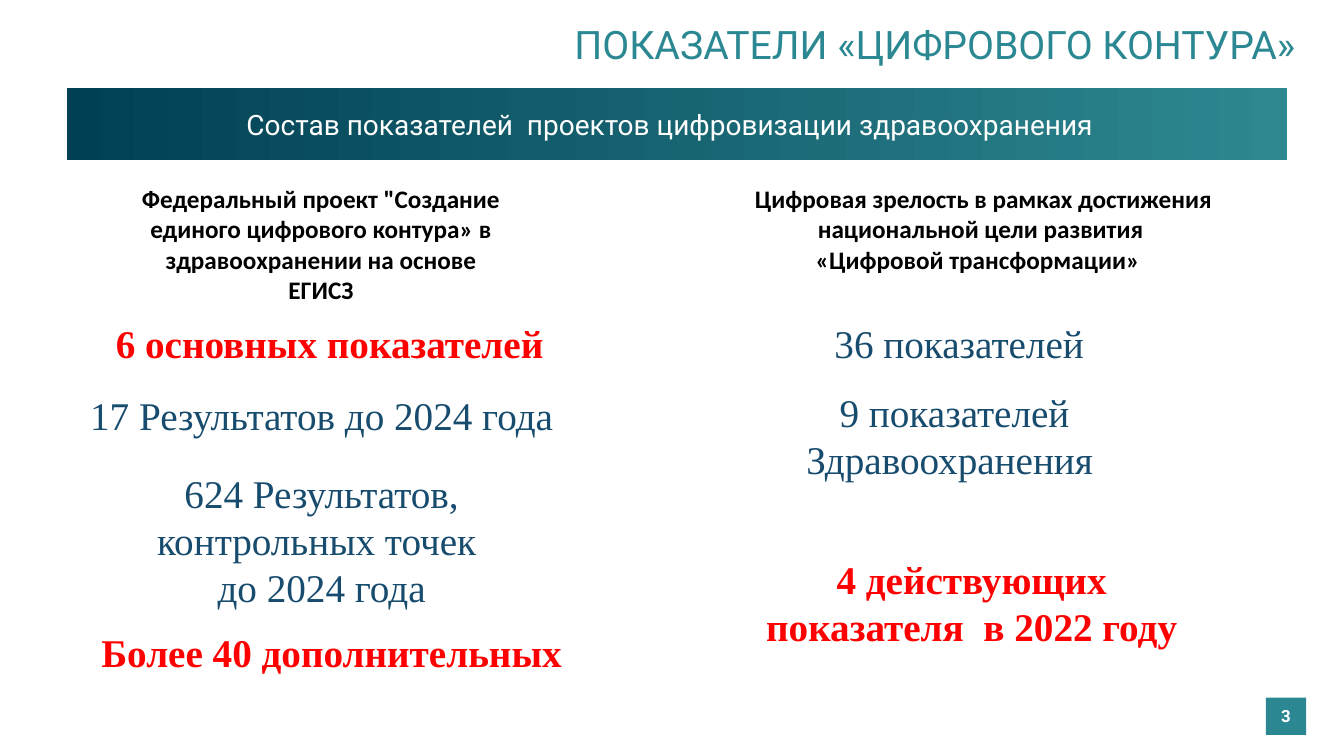
from pptx import Presentation, util as u
from pptx.dml.color import RGBColor
from pptx.enum import shapes, text

TEAL, DARK_TEAL, LIGHT_TEAL = "2B8892", "004053", "2E8890"
NAVY, RED, WHITE, BLACK = "184C6E", "FF0000", "FFFFFF", "000000"
CENTER, LEFT, RIGHT = text.PP_ALIGN.CENTER, text.PP_ALIGN.LEFT, text.PP_ALIGN.RIGHT


def color(value):
    """Turn a hex string into a colour."""
    return RGBColor.from_string(value)


def write(frame, content, size=28, font="Roboto", ink=WHITE, bold=False, align=CENTER,
          anchor=text.MSO_ANCHOR.MIDDLE, side_inset=0.25):
    """Fill a text frame, one paragraph for each string in content."""
    frame.word_wrap = True
    frame.vertical_anchor = anchor
    frame.margin_left = frame.margin_right = u.Cm(side_inset)
    for index, line in enumerate(content):
        paragraph = frame.add_paragraph() if index else frame.paragraphs[0]
        paragraph.text = line
        paragraph.alignment = align
        for run in paragraph.runs:
            run.font.size = u.Pt(size)
            run.font.name = font
            run.font.bold = bold
            run.font.color.rgb = color(ink)


class IndicatorSlide:
    """Hold the current slide and the style of its elements."""

    def __init__(self, presentation):
        """Add a title-only slide."""
        self.slide = presentation.slides.add_slide(presentation.slide_layouts[5])

    def title(self, box, content):
        """Place and format the title placeholder."""
        shape = self.slide.shapes.title
        shape.left, shape.top, shape.width, shape.height = map(u.Cm, box)
        write(shape.text_frame, [content], ink=TEAL, align=RIGHT)

    def bar(self, box, content, fills, **style):
        """Draw a rectangle with one fill colour or a gradient of two."""
        shape = self.slide.shapes.add_shape(shapes.MSO_SHAPE.RECTANGLE, *map(u.Cm, box))
        shape.shadow.inherit = False
        shape.line.fill.background()
        if len(fills) == 1:
            shape.fill.solid()
            shape.fill.fore_color.rgb = color(fills[0])
        else:
            shape.fill.gradient()
            shape.fill.gradient_angle = 0
            for stop, value in zip(shape.fill.gradient_stops, fills):
                stop.color.rgb = color(value)
        write(shape.text_frame, [content], **style)

    def label(self, box, *content, **style):
        """Add a text box that grows with its text."""
        frame = self.slide.shapes.add_textbox(*map(u.Cm, box)).text_frame
        write(frame, content, anchor=text.MSO_ANCHOR.TOP, **style)
        frame.auto_size = text.MSO_AUTO_SIZE.SHAPE_TO_FIT_TEXT


def main():
    """Build the slide and save it."""
    presentation = Presentation()
    presentation.slide_width, presentation.slide_height = u.Cm(33.87), u.Cm(19.05)
    page = IndicatorSlide(presentation)
    heading = dict(size=18, font="Calibri", ink=BLACK, bold=True)
    plain = dict(font="Times New Roman", ink=NAVY)
    accent = dict(font="Times New Roman", ink=RED, bold=True)

    page.title((2.13, 0, 30.76, 2.21), "ПОКАЗАТЕЛИ «ЦИФРОВОГО КОНТУРА»")
    page.bar((31.9, 17.58, 1.02, 0.94), "3", [TEAL], size=12, bold=True)
    page.bar((1.68, 2.21, 30.76, 1.83),
             "Состав показателей  проектов цифровизации здравоохранения  ",
             [DARK_TEAL, LIGHT_TEAL], size=20, side_inset=0.5)

    page.label((3.1, 4.5, 9.98, 3.33),
               'Федеральный проект "Создание единого цифрового контура» в '
               "здравоохранении на основе ЕГИСЗ", **heading)
    page.label((2.67, 7.92, 11.89, 1.45), "6 основных показателей", align=LEFT, **accent)
    page.label((1.88, 9.73, 12.45, 1.45), "17 Результатов до 2024 года", **plain)
    page.label((1.88, 11.71, 12.45, 3.84),
               "624 Результатов, контрольных точек ", "до 2024 года", **plain)
    page.label((2.13, 15.7, 12.45, 1.45), "Более 40 дополнительных", **accent)

    page.label((18.69, 4.5, 12.19, 2.57),
               "Цифровая зрелость в рамках достижения национальной цели развития \n"
               "«Цифровой трансформации»  ", **heading)
    page.label((20.78, 7.92, 8.86, 1.45), "36 показателей", align=LEFT, **plain)
    page.label((17.83, 9.65, 12.45, 2.64), "9 показателей Здравоохранения ", **plain)
    page.label((18.26, 13.87, 12.45, 2.64), "4 действующих показателя  в 2022 году", **accent)

    presentation.save("out.pptx")


if __name__ == "__main__":
    main()
